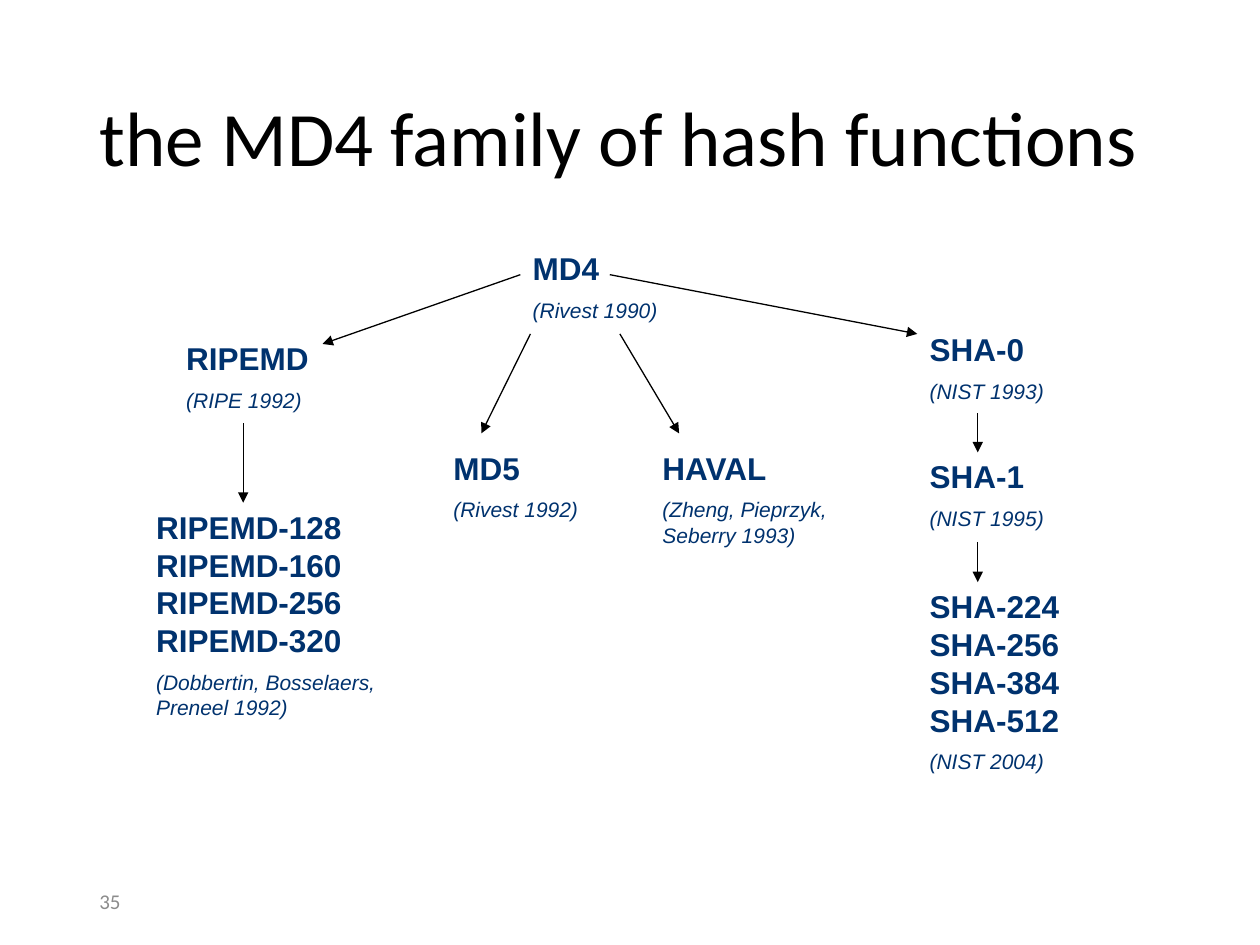
import pptx
import pptx.util
import pptx.dml.color
import pptx.enum.shapes
import pptx.enum.text
import pptx.oxml
import pptx.oxml.ns
from pptx.util import Inches

COLORS = {"title": "000000", "family": "00326E", "arrow": "000000", "number": "8C8C8C"}
HEADING = {"name": "Arial", "size": pptx.util.Pt(18), "bold": True, "italic": False}
CREDIT = {"name": "Arial", "size": pptx.util.Pt(12), "bold": False, "italic": True}
TITLE = {"name": "Calibri", "size": pptx.util.Pt(44)}
NUMBER = {"name": "Calibri", "size": pptx.util.Pt(12)}
MIDDLE = pptx.enum.text.MSO_ANCHOR.MIDDLE


def write(paragraph, text, font_format, color):
    run = paragraph.add_run()
    run.text = text
    for attribute, value in font_format.items():
        setattr(run.font, attribute, value)
    run.font.color.rgb = pptx.dml.color.RGBColor.from_string(COLORS[color])
    paragraph.alignment = pptx.enum.text.PP_ALIGN.LEFT


deck = pptx.Presentation()
deck.slide_width, deck.slide_height = Inches(10), Inches(7.5)
slide = deck.slides.add_slide(deck.slide_layouts[5])

title = slide.shapes.title
title.left, title.top = Inches(0.69), Inches(0.4)
title.width, title.height = Inches(8.62), Inches(1.45)
title.text_frame.auto_size = pptx.enum.text.MSO_AUTO_SIZE.NONE
title.text_frame.vertical_anchor = MIDDLE
title.text_frame.paragraphs[0].line_spacing = 0.9
write(title.text_frame.paragraphs[0], "the MD4 family of hash functions", TITLE, "title")

page_number = slide.shapes.add_textbox(Inches(0.69), Inches(6.95), Inches(2.25), Inches(0.4))
page_number.text_frame.vertical_anchor = MIDDLE
write(page_number.text_frame.paragraphs[0], "35", NUMBER, "number")

families = [
    (4.13, 1.91, 1.26, 0.7, "MD4", "(Rivest 1990)"),
    (1.38, 2.62, 1.26, 0.7, "RIPEMD", "(RIPE 1992)"),
    (1.14, 3.96, 2.05, 1.8, "RIPEMD-128 RIPEMD-160 RIPEMD-256 RIPEMD-320",
     "(Dobbertin, Bosselaers, Preneel 1992)"),
    (3.5, 3.49, 1.26, 0.7, "MD5", "(Rivest 1992)"),
    (5.16, 3.49, 1.57, 0.9, "HAVAL", "(Zheng, Pieprzyk, Seberry 1993)"),
    (7.28, 2.55, 1.26, 0.7, "SHA-0", "(NIST 1993)"),
    (7.28, 3.56, 1.26, 0.7, "SHA-1", "(NIST 1995)"),
    (7.28, 4.59, 1.26, 1.6, "SHA-224 SHA-256 SHA-384 SHA-512", "(NIST 2004)"),
]
for left, top, width, height, heading, credit in families:
    family = slide.shapes.add_textbox(Inches(left), Inches(top), Inches(width), Inches(height))
    family.text_frame.word_wrap = True
    family.text_frame.margin_top = Inches(0.07)
    write(family.text_frame.paragraphs[0], heading, HEADING, "family")
    credit_line = family.text_frame.add_paragraph()
    credit_line.space_before = pptx.util.Pt(6)
    write(credit_line, credit, CREDIT, "family")

descents = [
    (4.13, 2.18, 2.56, 2.73),
    (4.21, 2.65, 3.82, 3.44),
    (4.92, 2.65, 5.39, 3.44),
    (4.84, 2.18, 7.28, 2.65),
    (1.93, 3.36, 1.93, 3.99),
    (7.76, 3.28, 7.76, 3.59),
    (7.76, 4.3, 7.76, 4.62),
]
for ends in descents:
    arrow = slide.shapes.add_connector(
        pptx.enum.shapes.MSO_CONNECTOR.STRAIGHT, *[Inches(end) for end in ends])
    arrow.line.width = pptx.util.Pt(0.75)
    arrow.line.color.rgb = pptx.dml.color.RGBColor.from_string(COLORS["arrow"])
    head = pptx.oxml.parse_xml(
        f'<a:tailEnd {pptx.oxml.ns.nsdecls("a")} type="triangle"/>')
    arrow.line._get_or_add_ln().append(head)
    no_shadow = pptx.oxml.parse_xml(f'<a:effectLst {pptx.oxml.ns.nsdecls("a")}/>')
    arrow._element.spPr.append(no_shadow)

deck.save("out.pptx")
